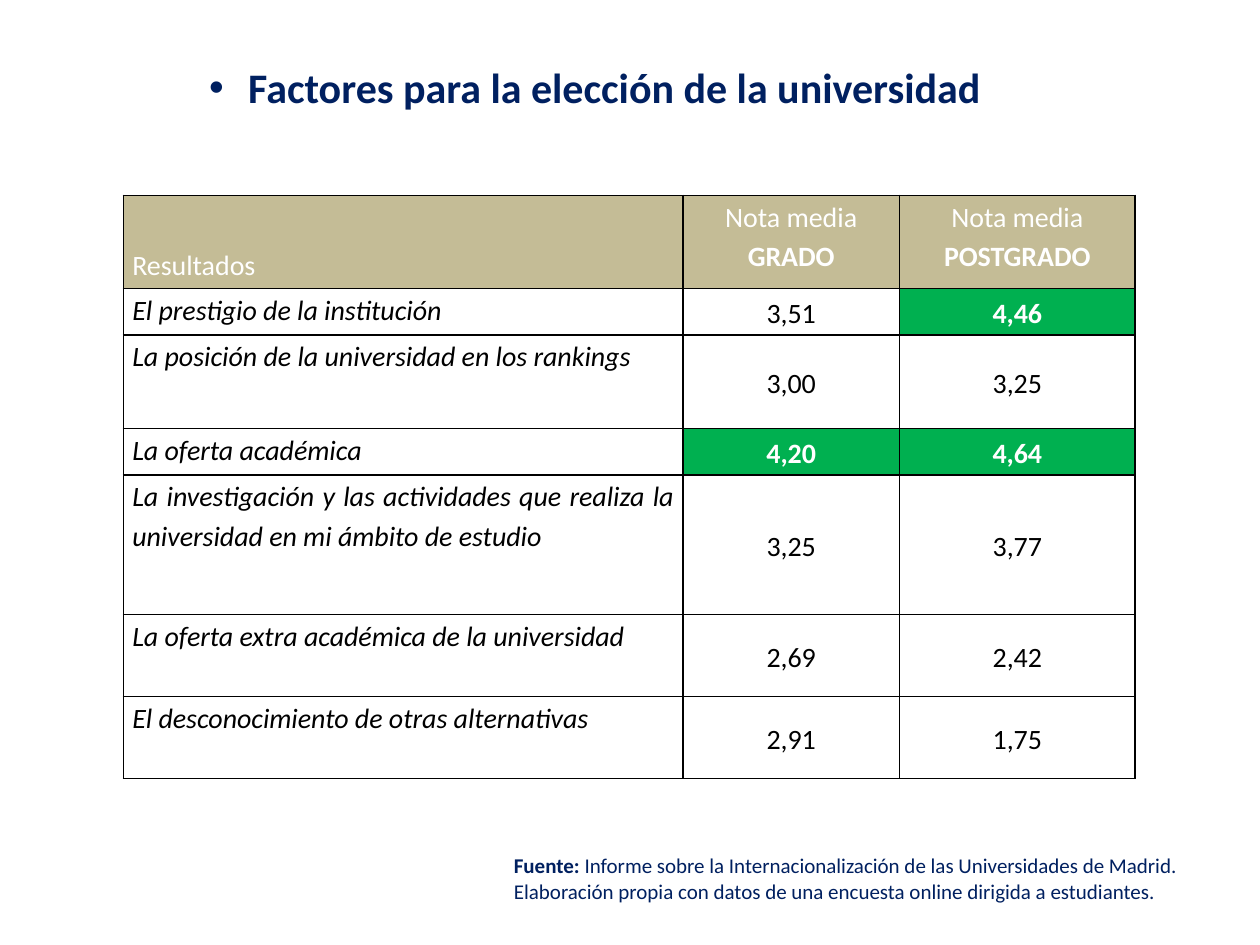
from dataclasses import dataclass

from lxml import etree
from pptx import Presentation
from pptx.dml.color import RGBColor
from pptx.enum.text import MSO_ANCHOR, MSO_AUTO_SIZE, PP_ALIGN
from pptx.oxml.ns import qn
from pptx.util import Inches, Pt

LEFT, MID, JUST = PP_ALIGN.LEFT, PP_ALIGN.CENTER, PP_ALIGN.JUSTIFY
TOP, CENTER, BOTTOM = MSO_ANCHOR.TOP, MSO_ANCHOR.MIDDLE, MSO_ANCHOR.BOTTOM
FIXED, GROW = MSO_AUTO_SIZE.NONE, MSO_AUTO_SIZE.SHAPE_TO_FIT_TEXT
COLS, ROWS = 100, 75
UNIT = Inches(10) // COLS


@dataclass(frozen=True)
class Theme:
    font: str = "Calibri"
    navy: str = "002060"
    sand: str = "C4BC96"
    green: str = "00B050"
    white: str = "FFFFFF"
    black: str = "000000"
    head: int = 24
    body: int = 16
    note: int = 12
    lead: float = 1.15


@dataclass(frozen=True)
class Box:
    col: float
    row: float
    wide: float
    high: float

    def place(self) -> list[int]:
        return [span(n) for n in (self.col, self.row, self.wide, self.high)]


@dataclass(frozen=True)
class Factor:
    name: str
    grade: str
    post: str
    high: float
    align: PP_ALIGN = JUST


@dataclass(frozen=True)
class Part:
    text: str
    color: str
    bold: bool = False
    slant: bool = False


THEME = Theme()
LINE = 3.7
TITLE = Box(10.6, 4.4, 84.5, 66.1)
GRID = Box(9.8, 15.5, 80.3, 46.3)
NOTE = Box(39.8, 67.2, 59.1, 5)
WIDTHS = (44.4, 17.2, 18.7)
LEVELS = ("GRADO", "POSTGRADO")
BEST = 4
FACTORS = (
    Factor("El prestigio de la institución", "3,51", "4,46", LINE),
    Factor("La posición de la universidad en los rankings", "3,00", "3,25", 2 * LINE),
    Factor("La oferta académica", "4,20", "4,64", LINE),
    Factor("La investigación y las actividades que realiza la universidad "
           "en mi ámbito de estudio", "3,25", "3,77", 3 * LINE),
    Factor("La oferta extra académica de la universidad", "2,69", "2,42", 6.5, LEFT),
    Factor("El desconocimiento de otras alternativas", "2,91", "1,75", 6.5, LEFT),
)


def span(cells: float) -> int:
    return round(cells * UNIT)


def write(para, parts: list[Part], size: int) -> None:
    for part in parts:
        run = para.add_run()
        run.text = part.text
        font = run.font
        font.name, font.size = THEME.font, Pt(size)
        font.bold, font.italic = part.bold, part.slant
        font.color.rgb = RGBColor.from_string(part.color)


def tint(node, color: str) -> None:
    etree.SubElement(node, qn("a:srgbClr"), val=color)


def border(cell) -> None:
    props = cell._tc.get_or_add_tcPr()
    for side in ("lnL", "lnR", "lnT", "lnB"):
        line = etree.SubElement(props, qn(f"a:{side}"), w=str(Pt(1)))
        tint(etree.SubElement(line, qn("a:solidFill")), THEME.black)


def fill_cell(cell, parts: list[Part], align: PP_ALIGN, anchor: MSO_ANCHOR,
              color: str = "") -> None:
    border(cell)
    if color:
        cell.fill.solid()
        cell.fill.fore_color.rgb = RGBColor.from_string(color)
    else:
        cell.fill.background()
    cell.margin_left = cell.margin_right = span(0.7)
    cell.margin_top = cell.margin_bottom = 0
    cell.vertical_anchor = anchor
    para = cell.text_frame.paragraphs[0]
    para.alignment, para.line_spacing = align, THEME.lead
    write(para, parts, THEME.body)


def add_title(slide) -> None:
    shape = slide.shapes.title
    shape.left, shape.top, shape.width, shape.height = TITLE.place()
    frame = shape.text_frame
    frame.vertical_anchor, frame.auto_size = TOP, FIXED
    para = frame.paragraphs[0]
    para.alignment, para.space_before = LEFT, Pt(0.2 * THEME.head)
    props = para._p.get_or_add_pPr()
    props.set("marL", str(span(8.1)))
    props.set("indent", str(-span(3.1)))
    tint(etree.SubElement(props, qn("a:buClr")), THEME.navy)
    etree.SubElement(props, qn("a:buFont"), typeface="Arial")
    etree.SubElement(props, qn("a:buChar"), char="•")
    write(para, [Part("Factores para la elección de la universidad", THEME.navy, True)],
          THEME.head)


def add_grid(slide) -> None:
    table = slide.shapes.add_table(len(FACTORS) + 1, len(WIDTHS), *GRID.place()).table
    table.first_row = table.horz_banding = False
    for col, wide in zip(table.columns, WIDTHS):
        col.width = span(wide)
    for row, high in zip(table.rows, [2 * LINE] + [item.high for item in FACTORS]):
        row.height = span(high)

    first = table.cell(0, 0)
    fill_cell(first, [Part("Resultados", THEME.white)], LEFT, BOTTOM, THEME.sand)
    first.margin_bottom = span(0.4)
    for col, level in enumerate(LEVELS, 1):
        parts = [Part("Nota media ", THEME.white), Part(level, THEME.white, True)]
        fill_cell(table.cell(0, col), parts, MID, TOP, THEME.sand)

    for row, item in enumerate(FACTORS, 1):
        name = Part(item.name, THEME.black, slant=True)
        fill_cell(table.cell(row, 0), [name], item.align, TOP)
        for col, mark in enumerate((item.grade, item.post), 1):
            top = float(mark.replace(",", ".")) > BEST
            part = Part(mark, THEME.white if top else THEME.black, top)
            fill_cell(table.cell(row, col), [part], MID, CENTER,
                      THEME.green if top else "")


def add_note(slide) -> None:
    frame = slide.shapes.add_textbox(*NOTE.place()).text_frame
    frame.word_wrap, frame.auto_size = True, GROW
    parts = [
        Part("Fuente: ", THEME.navy, True),
        Part("Informe sobre la Internacionalización de las Universidades de Madrid. "
             "Elaboración propia con datos de una encuesta online dirigida a "
             "estudiantes.", THEME.navy),
    ]
    write(frame.paragraphs[0], parts, THEME.note)


def main() -> None:
    deck = Presentation()
    deck.slide_width, deck.slide_height = COLS * UNIT, ROWS * UNIT
    slide = deck.slides.add_slide(deck.slide_layouts[5])
    add_title(slide)
    add_grid(slide)
    add_note(slide)
    deck.save("out.pptx")


if __name__ == "__main__":
    main()
